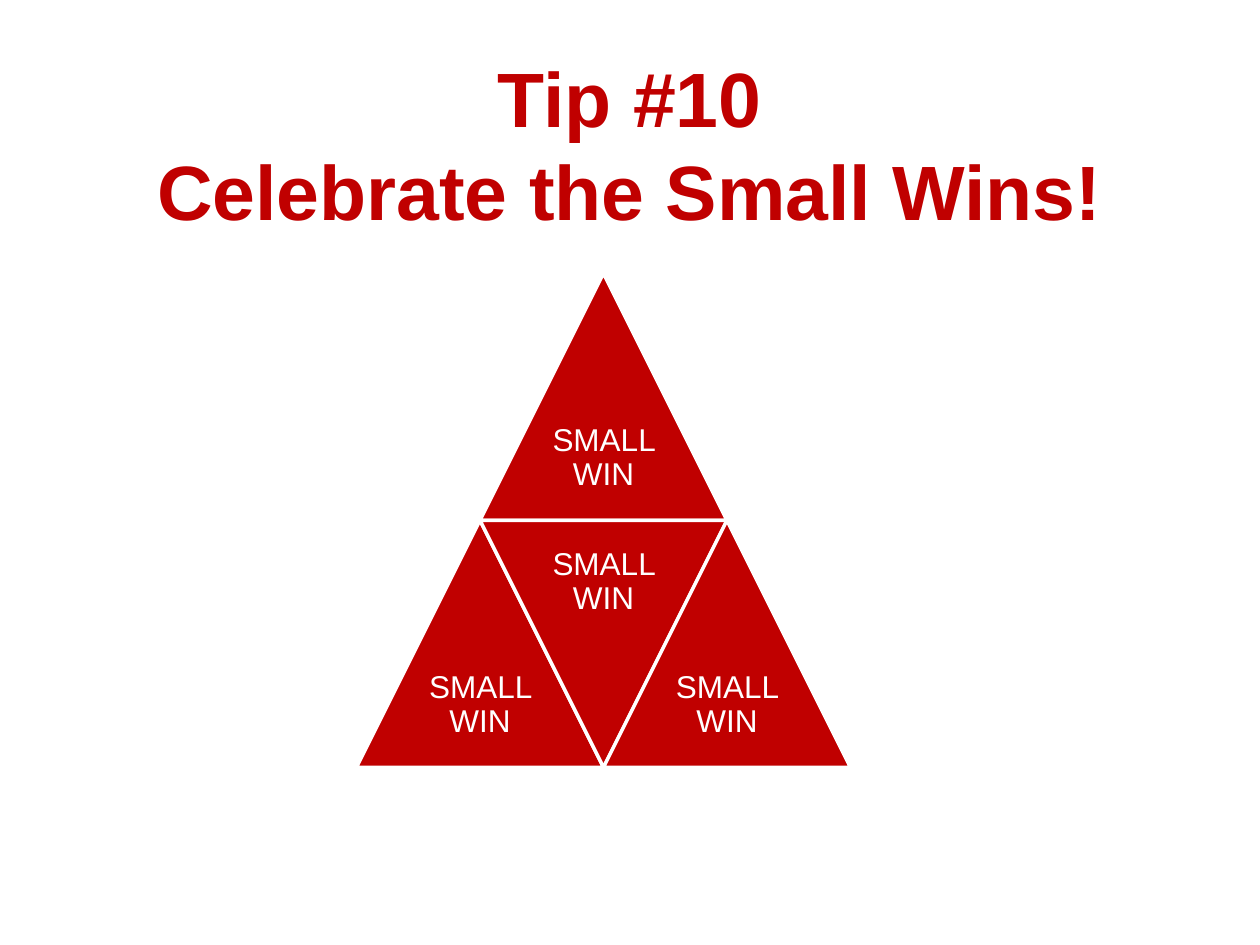
from dataclasses import dataclass

from pptx import Presentation
from pptx.dml.color import RGBColor
from pptx.enum.shapes import MSO_SHAPE
from pptx.enum.text import MSO_ANCHOR, PP_ALIGN
from pptx.slide import Slide
from pptx.util import Emu, Pt

EMU_PER_PX = 9144  # 100 px to the inch
COLORS = {"red": "C00000", "white": "FFFFFF"}
FONT = "Arial"

SIDE = 196
HALF, QUARTER = SIDE // 2, SIDE // 4
PYRAMID_LEFT, PYRAMID_TOP = 283, 217


@dataclass(frozen=True)
class Win:
    column: int  # in half sides from the left of the pyramid
    row: int
    inverted: bool = False
    label: str = "SMALL WIN"


WINS = [Win(1, 0), Win(0, 1), Win(1, 1, inverted=True), Win(2, 1)]


def px(length: int) -> Emu:
    return Emu(length * EMU_PER_PX)


def color(name: str) -> RGBColor:
    return RGBColor.from_string(COLORS[name])


def add_text(slide: Slide, text: str, left: int, top: int, width: int, height: int, *,
             size: int, fill: str, bold: bool = False, anchor: MSO_ANCHOR = MSO_ANCHOR.MIDDLE,
             inset_x: int = 7, inset_y: int = 7, line_spacing: float = 1.0,
             space_after: float = 0) -> None:
    frame = slide.shapes.add_textbox(px(left), px(top), px(width), px(height)).text_frame
    frame.word_wrap = True
    frame.vertical_anchor = anchor
    frame.margin_left = frame.margin_right = px(inset_x)
    frame.margin_top = frame.margin_bottom = px(inset_y)
    paragraph = frame.paragraphs[0]
    paragraph.text = text
    paragraph.alignment = PP_ALIGN.CENTER
    paragraph.line_spacing = line_spacing
    paragraph.space_after = Pt(space_after)
    for run in paragraph.runs:
        run.font.name = FONT
        run.font.size = Pt(size)
        run.font.bold = bold
        run.font.color.rgb = color(fill)


def add_win(slide: Slide, win: Win) -> None:
    """Draw one triangle of the pyramid with its label in the widest part."""
    left = PYRAMID_LEFT + win.column * HALF
    top = PYRAMID_TOP + win.row * SIDE
    triangle = slide.shapes.add_shape(
        MSO_SHAPE.ISOSCELES_TRIANGLE, px(left), px(top), px(SIDE), px(SIDE))
    triangle.rotation = 180 if win.inverted else 0
    triangle.shadow.inherit = False
    triangle.fill.solid()
    triangle.fill.fore_color.rgb = color("red")
    triangle.line.color.rgb = color("white")
    triangle.line.width = Pt(2)
    label_top = top if win.inverted else top + HALF
    add_text(slide, win.label, left + QUARTER, label_top, HALF, HALF,
             size=18, fill="white", line_spacing=0.9, space_after=6.3)


def main() -> None:
    presentation = Presentation()
    presentation.slide_width, presentation.slide_height = px(1000), px(750)
    slide = presentation.slides.add_slide(presentation.slide_layouts[6])
    for win in WINS:
        add_win(slide, win)
    add_text(slide, "Tip #10\vCelebrate the Small Wins!", 75, 50, 850, 142,
             size=44, fill="red", bold=True, anchor=MSO_ANCHOR.BOTTOM,
             inset_x=10, inset_y=5)
    presentation.save("out.pptx")


if __name__ == "__main__":
    main()
